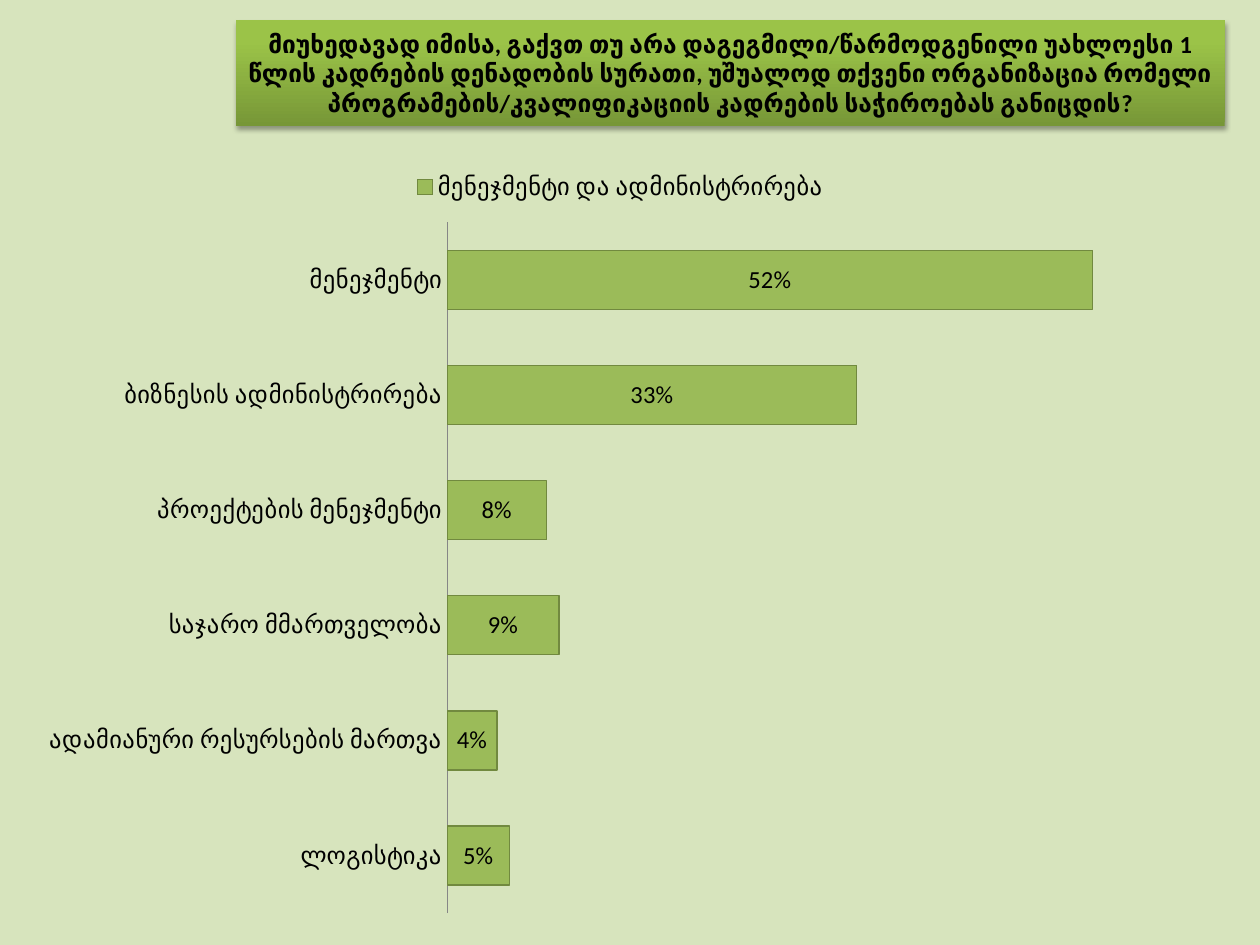
from dataclasses import dataclass
from typing import NamedTuple

from lxml import etree
from pptx import Presentation
from pptx import util as u
from pptx.chart.data import CategoryChartData
from pptx.dml.color import RGBColor
from pptx.enum import chart as ch
from pptx.enum import text
from pptx.oxml import parse_xml
from pptx.oxml.ns import nsdecls


@dataclass(frozen=True)
class Theme:
    font: str = "Calibri"
    size: int = 14
    background: str = "D7E4BD"
    ink: str = "000000"
    bar: str = "9BBB59"
    bar_edge: str = "71893F"
    axis: str = "868686"
    title_bottom: str = "779737"
    title_top: str = "9BC348"


class Need(NamedTuple):
    programme: str
    share: float


THEME = Theme()
TITLE = (
    "მიუხედავად იმისა, გაქვთ თუ არა დაგეგმილი/წარმოდგენილი უახლოესი 1 წლის "
    "კადრების დენადობის სურათი, უშუალოდ თქვენი ორგანიზაცია რომელი "
    "პროგრამების/კვალიფიკაციის კადრების საჭიროებას განიცდის?"
)
SERIES = "მენეჯმენტი და ადმინისტრირება"
NEEDS = [
    Need("ლოგისტიკა", 0.05),
    Need("ადამიანური რესურსების მართვა", 0.04),
    Need("საჯარო მმართველობა", 0.09),
    Need("პროექტების მენეჯმენტი", 0.08),
    Need("ბიზნესის ადმინისტრირება", 0.33),
    Need("მენეჯმენტი", 0.52),
]


def rgb(value: str) -> RGBColor:
    return RGBColor.from_string(value)


def style_font(font, bold: bool = False) -> None:
    font.name = THEME.font
    font.size = u.Pt(THEME.size)
    font.bold = bold
    font.color.rgb = rgb(THEME.ink)


def add_shadow(sp) -> None:
    effects = parse_xml(f"<a:effectLst {nsdecls('a')}/>")
    shadow = etree.SubElement(
        effects, effects.tag.replace("effectLst", "outerShdw"),
        blurRad=str(u.Pt(3.1)), dist=str(u.Pt(1.8)), dir="5400000", rotWithShape="0",
    )
    color = etree.SubElement(
        shadow, effects.tag.replace("effectLst", "srgbClr"), val=THEME.ink)
    etree.SubElement(color, effects.tag.replace("effectLst", "alpha"), val="35000")
    sp.element.spPr.append(effects)


def draw_title(s) -> None:
    sp = s.shapes.title
    sp.left, sp.top = u.Inches(1.87), u.Inches(0.16)
    sp.width, sp.height = u.Inches(7.85), u.Inches(0.84)
    sp.fill.gradient()
    sp.fill.gradient_angle = 90
    stops = zip(sp.fill.gradient_stops, (THEME.title_bottom, THEME.title_top), (0, 0.8))
    for stop, color, position in stops:
        stop.color.rgb = rgb(color)
        stop.position = position
    add_shadow(sp)
    tf = sp.text_frame
    tf.word_wrap = True
    tf.auto_size = text.MSO_AUTO_SIZE.NONE
    tf.vertical_anchor = text.MSO_ANCHOR.MIDDLE
    tf.margin_left = tf.margin_right = u.Inches(0.1)
    tf.margin_top = tf.margin_bottom = u.Inches(0.05)
    p = tf.paragraphs[0]
    p.text = TITLE
    p.alignment = text.PP_ALIGN.CENTER
    style_font(p.font, bold=True)


def draw_chart(s, needs: list[Need]) -> None:
    data = CategoryChartData(number_format="0%")
    data.categories = [need.programme for need in needs]
    data.add_series(SERIES, [need.share for need in needs])
    chart = s.shapes.add_chart(
        ch.XL_CHART_TYPE.BAR_STACKED,
        u.Inches(0.2), u.Inches(1.25), u.Inches(9.45), u.Inches(6.12), data,
    ).chart
    style_font(chart.font)
    chart.has_title = False
    chart.has_legend = True
    chart.legend.position = ch.XL_LEGEND_POSITION.TOP
    chart.legend.include_in_layout = False

    chart.category_axis.major_tick_mark = ch.XL_TICK_MARK.NONE
    chart.category_axis.format.line.color.rgb = rgb(THEME.axis)
    chart.value_axis.visible = False
    chart.value_axis.has_major_gridlines = False
    chart.value_axis.minimum_scale = 0
    chart.value_axis.maximum_scale = 0.6

    plot = chart.plots[0]
    plot.gap_width = 95
    plot.overlap = 100
    plot.vary_by_categories = False
    plot.has_data_labels = True
    labels = plot.data_labels
    labels.show_value = True
    labels.number_format = "0%"
    labels.number_format_is_linked = False
    labels.position = ch.XL_LABEL_POSITION.CENTER
    style_font(labels.font)

    bars = plot.series[0].format
    bars.fill.solid()
    bars.fill.fore_color.rgb = rgb(THEME.bar)
    bars.line.color.rgb = rgb(THEME.bar_edge)
    bars.line.width = u.Pt(0.75)


def main() -> None:
    prs = Presentation()
    prs.slide_width, prs.slide_height = u.Inches(10), u.Inches(7.5)
    s = prs.slides.add_slide(prs.slide_layouts[5])
    s.background.fill.solid()
    s.background.fill.fore_color.rgb = rgb(THEME.background)
    draw_chart(s, NEEDS)
    draw_title(s)
    prs.save("out.pptx")


if __name__ == "__main__":
    main()
